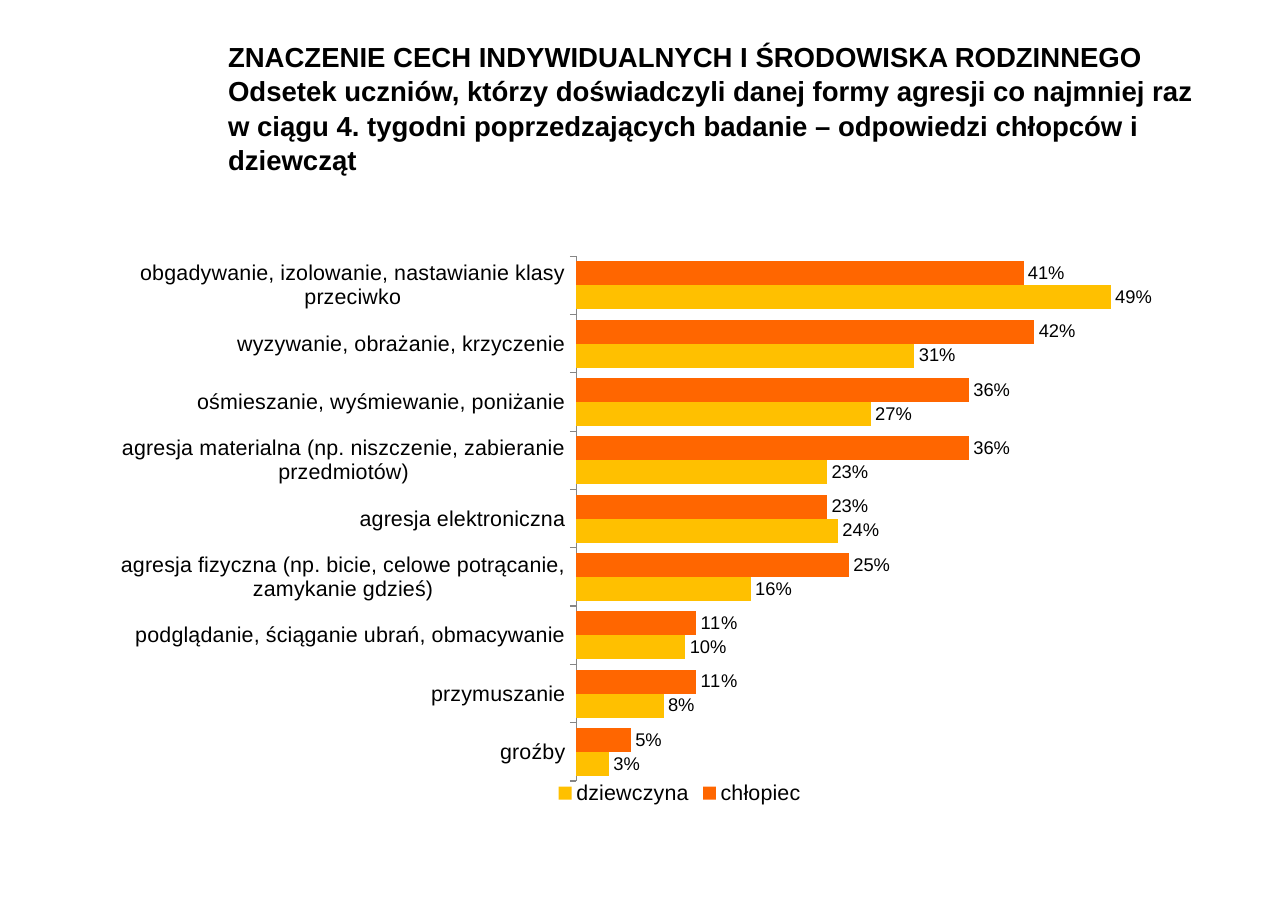
from dataclasses import dataclass

from lxml.etree import SubElement
from pptx import Presentation
from pptx.chart.data import CategoryChartData as Data
from pptx.dml.color import RGBColor as Color
from pptx.enum.chart import XL_CHART_TYPE as Kind
from pptx.enum.chart import XL_LABEL_POSITION as Spot
from pptx.enum.chart import XL_LEGEND_POSITION as Side
from pptx.enum.chart import XL_TICK_MARK as Tick
from pptx.enum.text import MSO_ANCHOR as Anchor
from pptx.oxml.ns import qn
from pptx.util import Inches, Pt


@dataclass(frozen=True)
class Theme:
    face: str = "Arial"
    ink: str = "000000"
    axis: str = "868686"
    boy: str = "FF6600"
    girl: str = "FFC000"
    head: int = 18
    label: int = 14
    value: int = 12
    base: int = 10


class Deck:
    def __init__(self, theme, width, height):
        self.theme = theme
        self.file = Presentation()
        self.file.slide_width = Inches(width)
        self.file.slide_height = Inches(height)
        self.slide = self.file.slides.add_slide(self.file.slide_layouts[6])

    def style(self, font, size, bold=False):
        font.name = self.theme.face
        font.size = Pt(size)
        font.bold = bold
        font.color.rgb = Color.from_string(self.theme.ink)

    def title(self, text, box):
        frame = self.slide.shapes.add_textbox(*map(Inches, box)).text_frame
        frame.word_wrap = True
        frame.vertical_anchor = Anchor.TOP
        frame.margin_left = frame.margin_right = 0
        frame.margin_top = frame.margin_bottom = 0
        para = frame.paragraphs[0]
        para.text = text
        para.line_spacing = 1.04
        self.style(para.font, self.theme.head, True)

    def bars(self, names, rows, box, area):
        data = Data(number_format="#,##0%")
        data.categories = names
        for name, vals, _ in rows:
            data.add_series(name, vals)
        shape = self.slide.shapes.add_chart(
            Kind.BAR_CLUSTERED, *map(Inches, box), data)
        chart = shape.chart
        self.style(chart.font, self.theme.base)
        chart.has_title = False
        self.axes(chart)
        self.legend(chart)
        self.place(chart, area)
        plot = chart.plots[0]
        plot.gap_width = 43
        plot.overlap = 0
        plot.vary_by_categories = False
        for line, (_, _, color) in zip(plot.series, rows):
            line.format.fill.solid()
            line.format.fill.fore_color.rgb = Color.from_string(color)
            self.labels(line.data_labels)

    def axes(self, chart):
        cat = chart.category_axis
        cat.reverse_order = True
        cat.major_tick_mark = Tick.OUTSIDE
        cat.format.line.color.rgb = Color.from_string(self.theme.axis)
        self.style(cat.tick_labels.font, self.theme.label)
        val = chart.value_axis
        val.minimum_scale = 0
        val.maximum_scale = 0.6
        val.has_major_gridlines = False
        val.visible = False

    def legend(self, chart):
        chart.has_legend = True
        chart.legend.position = Side.BOTTOM
        chart.legend.include_in_layout = False
        self.style(chart.legend.font, self.theme.label)

    def labels(self, tags):
        tags.show_value = True
        tags.position = Spot.OUTSIDE_END
        tags.number_format = "#,##0%"
        tags.number_format_is_linked = False
        self.style(tags.font, self.theme.value)

    def place(self, chart, area):
        zone = chart.plots[0]._element.getparent()
        for old in zone.findall(qn("c:layout")):
            zone.remove(old)
        outer = zone.makeelement(qn("c:layout"))
        zone.insert(0, outer)
        inner = SubElement(outer, qn("c:manualLayout"))
        parts = [("layoutTarget", "inner"), ("xMode", "edge"),
                 ("yMode", "edge"), *zip("xywh", area)]
        for tag, val in parts:
            SubElement(inner, qn(f"c:{tag}")).set("val", str(val))


def main():
    theme = Theme()
    deck = Deck(theme, 11.69, 8.27)
    deck.title(
        "ZNACZENIE CECH INDYWIDUALNYCH I ŚRODOWISKA RODZINNEGO\v"
        "Odsetek uczniów, którzy doświadczyli danej formy agresji co "
        "najmniej raz w ciągu 4. tygodni poprzedzających badanie – "
        "odpowiedzi chłopców i dziewcząt",
        (2.07, 0.35, 8.81, 1))
    names = [
        "obgadywanie, izolowanie, nastawianie klasy przeciwko",
        "wyzywanie, obrażanie, krzyczenie",
        "ośmieszanie, wyśmiewanie, poniżanie",
        "agresja materialna (np. niszczenie, zabieranie przedmiotów)",
        "agresja elektroniczna",
        "agresja fizyczna (np. bicie, celowe potrącanie, zamykanie gdzieś)",
        "podglądanie, ściąganie ubrań, obmacywanie",
        "przymuszanie",
        "groźby",
    ]
    boys = [0.41, 0.42, 0.36, 0.36, 0.23, 0.25, 0.11, 0.11, 0.05]
    girls = [0.49, 0.31, 0.27, 0.23, 0.24, 0.16, 0.1, 0.08, 0.03]
    rows = [("chłopiec", boys, theme.boy), ("dziewczyna", girls, theme.girl)]
    deck.bars(names, rows, (0.96, 2.17, 10.42, 5.18),
              (0.41, 0.03, 0.57, 0.92))
    deck.file.save("out.pptx")


if __name__ == "__main__":
    main()
